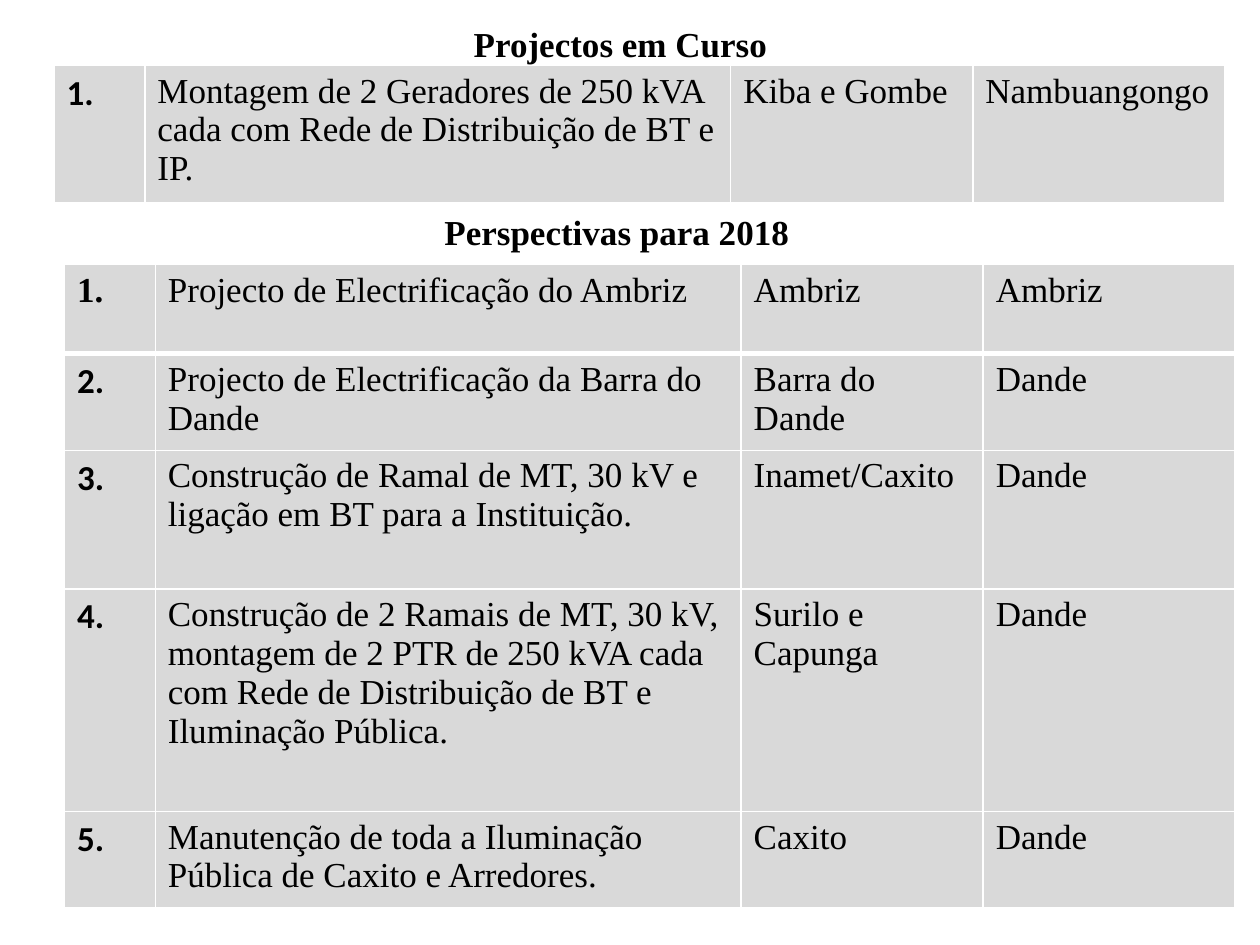
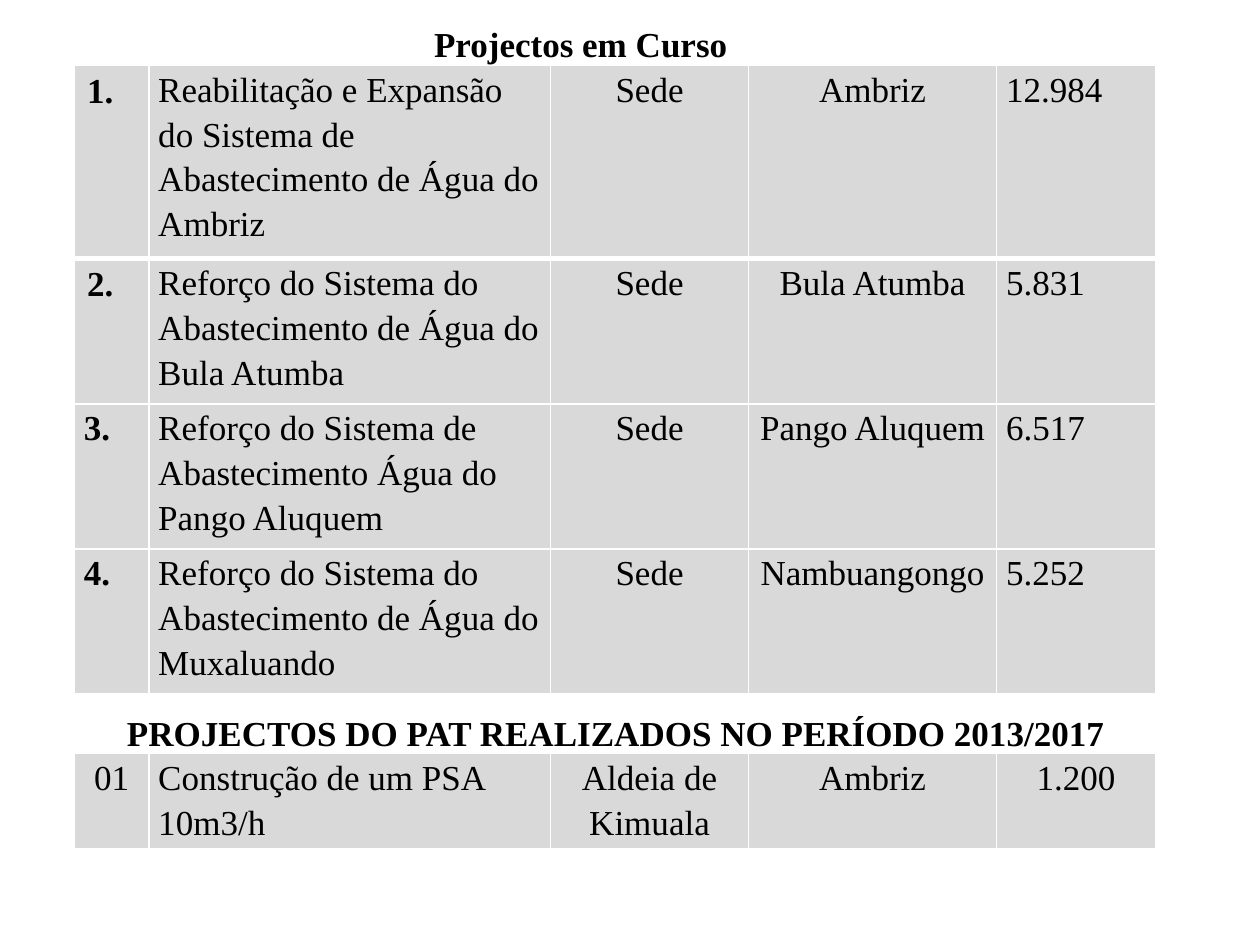
from dataclasses import dataclass

from lxml.etree import SubElement
from pptx import Presentation
from pptx.dml.color import RGBColor
from pptx.enum.text import MSO_AUTO_SIZE, PP_ALIGN
from pptx.oxml.ns import qn
from pptx.slide import Slide
from pptx.table import _Cell
from pptx.text.text import _Paragraph
from pptx.util import Cm, Pt

COLOURS = {"text": "000000", "cell": "D9D9D9", "rule": "FFFFFF"}
SERIF = "Times New Roman"
SANS = "Calibri"
TEXT_SIZE = Pt(20)
HANGING_INDENT = Cm(0.95)
THIN_RULE, THICK_RULE = Pt(1), Pt(3)


@dataclass(frozen=True)
class CellStyle:
    font: str = SERIF
    bold: bool = False
    align: PP_ALIGN = PP_ALIGN.LEFT
    compact: bool = False
    hanging: bool = False


@dataclass(frozen=True)
class Heading:
    text: str
    left: float
    top: float
    width: float
    wrap: bool = False


@dataclass(frozen=True)
class Project:
    height: float
    number_style: CellStyle
    texts: tuple[str, ...]


@dataclass(frozen=True)
class ProjectTable:
    left: float
    top: float
    widths: tuple[float, ...]
    detail_styles: tuple[CellStyle, ...]
    projects: tuple[Project, ...]


PLAIN = CellStyle()
COMPACT = CellStyle(compact=True)
COMPACT_CENTRED = CellStyle(align=PP_ALIGN.CENTER, compact=True)
COMPACT_NUMBER = CellStyle(bold=True, compact=True)
SERIF_NUMBER = CellStyle(bold=True, hanging=True)
SANS_NUMBER = CellStyle(font=SANS, bold=True, hanging=True)

POWER_WIDTHS = (1.83, 11.81, 4.88, 5.08)
POWER_STYLES = (PLAIN,) * 3
WATER_WIDTHS = (1.5, 8.1, 3.99, 5.0, 3.2)
WATER_STYLES = (COMPACT, COMPACT_CENTRED, COMPACT_CENTRED, COMPACT)
PAT_STYLES = (COMPACT,) + (COMPACT_CENTRED,) * 3

POWER_SLIDE = (
    Heading("Projectos em Curso", 9.3, 0.33, 6.48),
    ProjectTable(1.09, 1.32, POWER_WIDTHS, POWER_STYLES, (
        Project(2.75, SANS_NUMBER, (
            "1.", "Montagem de 2 Geradores de 250 kVA cada com Rede de Distribuição de BT e IP.",
            "Kiba e Gombe", "Nambuangongo")),
    )),
    Heading("Perspectivas para 2018", 8.71, 4.11, 7.52),
    ProjectTable(1.3, 5.33, POWER_WIDTHS, POWER_STYLES, (
        Project(1.8, SERIF_NUMBER, (
            "1.", "Projecto de Electrificação do Ambriz", "Ambriz", "Ambriz")),
        Project(1.94, SANS_NUMBER, (
            "2.", "Projecto de Electrificação da Barra do Dande", "Barra do Dande", "Dande")),
        Project(2.8, SANS_NUMBER, (
            "3.", "Construção de Ramal de MT, 30 kV e ligação em BT para a Instituição.",
            "Inamet/Caxito", "Dande")),
        Project(4.48, SANS_NUMBER, (
            "4.", "Construção de 2 Ramais de MT, 30 kV, montagem de 2 PTR de 250 kVA cada "
            "com Rede de Distribuição de BT e Iluminação Pública.",
            "Surilo e Capunga", "Dande")),
        Project(1.94, SANS_NUMBER, (
            "5.", "Manutenção de toda a Iluminação Pública de Caxito e Arredores.",
            "Caxito", "Dande")),
    )),
)

WATER_SLIDE = (
    ProjectTable(1.5, 1.32, WATER_WIDTHS, WATER_STYLES, (
        Project(3.59, SERIF_NUMBER, (
            "1.", "Reabilitação e Expansão do Sistema de Abastecimento de Água do Ambriz",
            "Sede", "Ambriz", "12.984")),
        Project(2.7, SERIF_NUMBER, (
            "2.", "Reforço do Sistema do Abastecimento de Água do Bula Atumba",
            "Sede", "Bula Atumba", "5.831")),
        Project(2.7, COMPACT_NUMBER, (
            "3.", "Reforço do Sistema de Abastecimento Água do Pango Aluquem",
            "Sede", "Pango Aluquem", "6.517")),
        Project(2.7, COMPACT_NUMBER, (
            "4.", "Reforço do Sistema do Abastecimento de Água do Muxaluando",
            "Sede", "Nambuangongo", "5.252")),
    )),
    Heading("Projectos em Curso", 8.5, 0.33, 6.48),
    Heading("PROJECTOS DO PAT REALIZADOS NO PERÍODO 2013/2017", 2.31, 14.22, 20.8, wrap=True),
    ProjectTable(1.5, 15.19, WATER_WIDTHS, PAT_STYLES, (
        Project(1.88, COMPACT_CENTRED, (
            "01", "Construção de um PSA 10m3/h", "Aldeia de Kimuala", "Ambriz", "1.200")),
    )),
)


def add_run(paragraph: _Paragraph, text: str, font: str, bold: bool) -> None:
    run = paragraph.add_run()
    run.text = text
    run.font.name = font
    run.font.size = TEXT_SIZE
    run.font.bold = bold
    run.font.color.rgb = RGBColor.from_string(COLOURS["text"])


def draw_heading(slide: Slide, heading: Heading) -> None:
    box = slide.shapes.add_textbox(
        Cm(heading.left), Cm(heading.top), Cm(heading.width), Cm(1.11))
    box.text_frame.word_wrap = heading.wrap
    box.text_frame.auto_size = MSO_AUTO_SIZE.SHAPE_TO_FIT_TEXT
    add_run(box.text_frame.paragraphs[0], heading.text, SERIF, True)


def add_rules(cell: _Cell, bottom: Pt) -> None:
    properties = cell._tc.get_or_add_tcPr()
    rules = {"lnL": THIN_RULE, "lnR": THIN_RULE, "lnT": THIN_RULE, "lnB": bottom}
    for side, width in rules.items():
        line = SubElement(properties, qn(f"a:{side}"), w=str(width))
        fill = SubElement(line, qn("a:solidFill"))
        SubElement(fill, qn("a:srgbClr"), val=COLOURS["rule"])


def fill_cell(cell: _Cell, text: str, style: CellStyle, bottom: Pt) -> None:
    add_rules(cell, bottom)
    cell.fill.solid()
    cell.fill.fore_color.rgb = RGBColor.from_string(COLOURS["cell"])
    paragraph = cell.text_frame.paragraphs[0]
    paragraph.alignment = style.align
    if style.compact:
        cell.margin_left = cell.margin_right = Cm(0.19)
        cell.margin_top = cell.margin_bottom = 0
        paragraph.line_spacing = 1.15
    if style.hanging:
        indents = paragraph._p.get_or_add_pPr()
        indents.set("marL", str(HANGING_INDENT))
        indents.set("indent", str(-HANGING_INDENT))
    add_run(paragraph, text, style.font, style.bold)


def draw_table(slide: Slide, content: ProjectTable) -> None:
    table = slide.shapes.add_table(
        len(content.projects), len(content.widths), Cm(content.left), Cm(content.top),
        Cm(sum(content.widths)), Cm(sum(project.height for project in content.projects))).table
    table.first_row = False
    table.horz_banding = False
    for column, width in zip(table.columns, content.widths):
        column.width = Cm(width)
    for index, (row, project) in enumerate(zip(table.rows, content.projects)):
        row.height = Cm(project.height)
        bottom = THIN_RULE if index else THICK_RULE
        styles = (project.number_style, *content.detail_styles)
        for cell, text, style in zip(row.cells, project.texts, styles):
            fill_cell(cell, text, style, bottom)


def main() -> None:
    presentation = Presentation()
    presentation.slide_width = Cm(25.4)
    presentation.slide_height = Cm(19.05)
    for parts in (POWER_SLIDE, WATER_SLIDE):
        slide = presentation.slides.add_slide(presentation.slide_layouts[6])
        for part in parts:
            if isinstance(part, Heading):
                draw_heading(slide, part)
            else:
                draw_table(slide, part)
    presentation.save("out.pptx")


if __name__ == "__main__":
    main()
